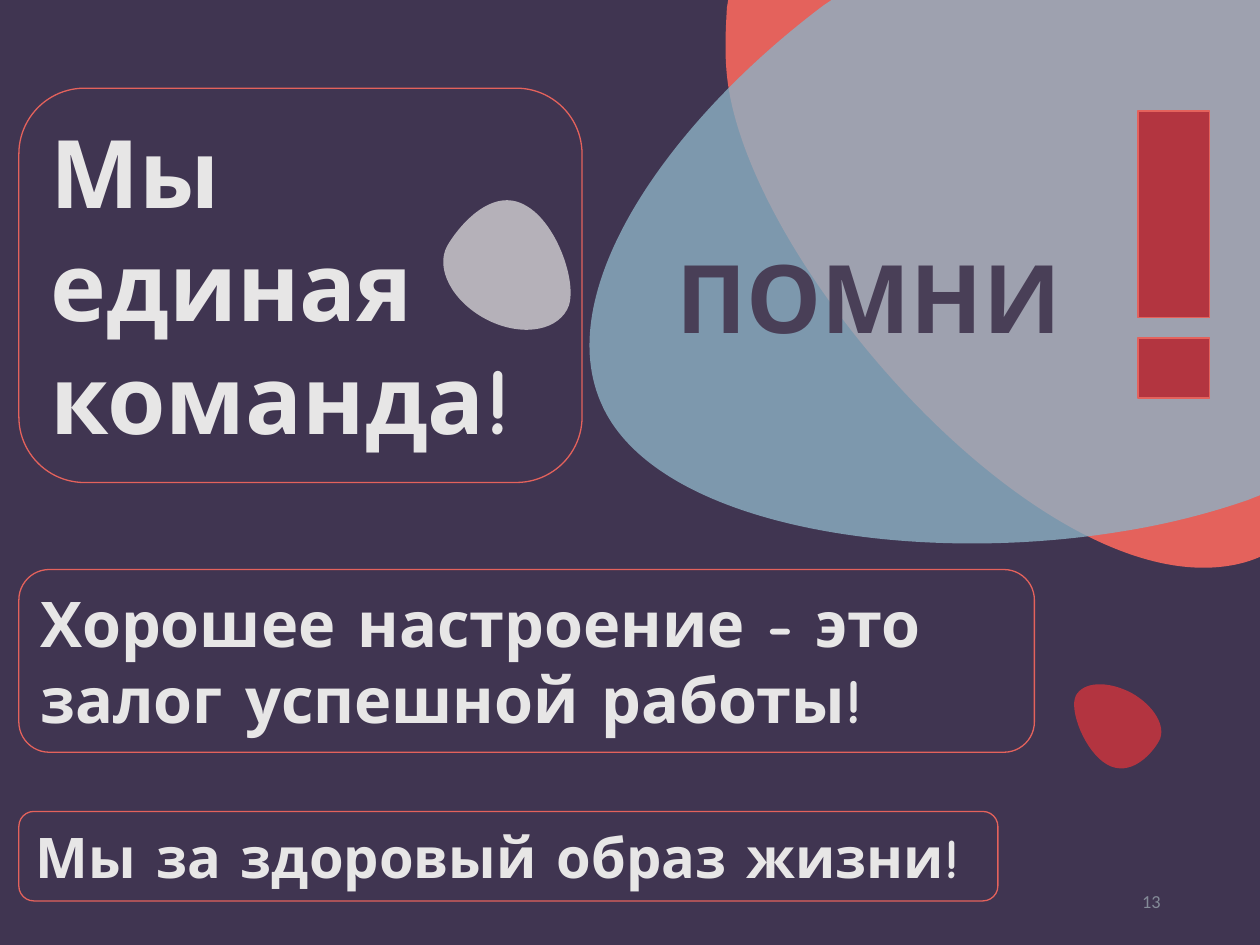
"""Build the team-spirit slide: blobs, three framed slogans and an exclamation mark."""
from pptx import Presentation
from pptx import util as u
from pptx.dml.color import RGBColor
from pptx.enum import shapes, text
from pptx.oxml.ns import qn
from lxml import etree

COLS, ROWS = 1000, 750
THEME = {
    "night": "403551", "coral": "E4625C", "sky": "8DB1C4", "light": "E7E6E6",
    "red": "D0343C", "mark": "B33540", "plum": "493F57", "grey": "848B98",
    "heading": "Comic Neue", "body": "Calibri",
    "large": 54, "medium": 36, "small": 32, "number": 10.5, "edge": 1,
}
BLOBS = [
    ("coral", 100, (576, 0, 424, 451), [
        (578, 0), (1000, 0), (1000, 442), (995, 444), (987, 447, 978, 449, 968, 450),
        (817, 465, 592, 206, 577, 60), (575, 41, 576, 23, 577, 6)]),
    ("sky", 80, (468, 0, 532, 432), [
        (660, 0), (1000, 0), (1000, 393), (990, 397), (955, 409, 921, 417, 889, 422),
        (723, 449, 522, 418, 478, 322), (436, 232, 530, 97, 654, 4)]),
    ("light", 70, (352, 159, 101, 103), [
        (450, 246), (460, 229, 443, 177, 417, 163), (391, 148, 365, 178, 355, 195),
        (345, 213, 359, 239, 385, 253), (411, 267, 440, 264, 450, 246)]),
    ("red", 80, (852, 543, 70, 66), [
        (854, 552), (848, 563, 861, 597, 879, 607), (897, 617, 914, 599, 920, 588),
        (926, 577, 916, 560, 898, 550), (879, 540, 860, 541, 854, 552)]),
]
SLOGANS = [
    ("Мы единая команда!", "large", (15, 70, 447, 313)),
    ("Хорошее настроение - это залог успешной работы!", "medium", (15, 452, 806, 145)),
    ("Мы за здоровый образ жизни!", "small", (15, 644, 777, 71)),
]
MARK = [(903, 88, 57, 164), (903, 268, 57, 48)]
REMINDER = ("ПОМНИ", (527, 185, 359, 101))
NUMBER = ("13", (706, 695, 225, 40))
GROW = {"auto_size": text.MSO_AUTO_SIZE.SHAPE_TO_FIT_TEXT,
        "vertical_anchor": text.MSO_ANCHOR.TOP}


def assign(obj, values):
    """Set every attribute named in a dict."""
    for name, value in values.items():
        setattr(obj, name, value)


def color(name):
    """Return a theme colour."""
    return RGBColor.from_string(THEME[name])


def place(prs, box):
    """Turn grid units into slide lengths, x and y alternating."""
    cell = prs.slide_width / COLS, prs.slide_height / ROWS
    return [round(v * cell[i % 2]) for i, v in enumerate(box)]


def paint(sp, fill=None, line=None, width=None, alpha=100):
    """Set fill, opacity and outline, without a shadow."""
    sp.shadow.inherit = False
    if fill:
        sp.fill.solid()
        sp.fill.fore_color.rgb = color(fill)
        if alpha < 100:
            clr = sp.fill._xPr.find(qn("a:solidFill"))[0]
            etree.SubElement(clr, qn("a:alpha"), val=str(alpha * 1000))
    else:
        sp.fill.background()
    if line:
        sp.line.color.rgb = color(line)
        if width:
            sp.line.width = u.Pt(width)
    else:
        sp.line.fill.background()


def write(sp, words, font, size, ink, frame, bold=False, align=text.PP_ALIGN.LEFT):
    """Fill a shape with one styled paragraph."""
    tf = sp.text_frame
    assign(tf, {"word_wrap": True} | frame)
    p = tf.paragraphs[0]
    p.alignment = align
    r = p.add_run()
    r.text = words
    assign(r.font, {"name": THEME[font], "size": u.Pt(THEME[size]), "bold": bold})
    r.font.color.rgb = color(ink)


def add_blob(prs, s, box, steps):
    """Add a freeform whose six-number steps are cubic curves."""
    left, top, width, height = place(prs, box)
    pen = s.shapes.build_freeform(left, top)
    pen.add_line_segments([(left + width, top), (left + width, top + height)])
    sp = pen.convert_to_shape()
    assign(sp, {"left": left, "top": top, "width": width, "height": height})
    path = next(sp._element.iter(qn("a:path")))
    for old in list(path):
        path.remove(old)
    for i, step in enumerate(steps):
        tag = "a:moveTo" if i == 0 else "a:lnTo" if len(step) == 2 else "a:cubicBezTo"
        node = etree.SubElement(path, qn(tag))
        spots = place(prs, step)
        for x, y in zip(spots[::2], spots[1::2]):
            etree.SubElement(node, qn("a:pt"), x=str(x - left), y=str(y - top))
    etree.SubElement(path, qn("a:close"))
    return sp


def main():
    """Assemble and save the slide."""
    prs = Presentation()
    assign(prs, {"slide_width": u.Inches(10), "slide_height": u.Inches(7.5)})
    s = prs.slides.add_slide(prs.slide_layouts[6])
    s.background.fill.solid()
    s.background.fill.fore_color.rgb = color("night")

    for fill, alpha, box, steps in BLOBS:
        paint(add_blob(prs, s, box, steps), fill, alpha=alpha)

    words, box = NUMBER
    write(s.shapes.add_textbox(*place(prs, box)), words, "body", "number", "grey",
          {"vertical_anchor": text.MSO_ANCHOR.MIDDLE}, align=text.PP_ALIGN.RIGHT)

    for words, size, box in SLOGANS:
        sp = s.shapes.add_shape(shapes.MSO_SHAPE.ROUNDED_RECTANGLE, *place(prs, box))
        paint(sp, line="coral")
        write(sp, words, "heading", size, "light", GROW, bold=True)

    mark = s.shapes.add_group_shape()
    for box in MARK:
        sp = mark.shapes.add_shape(shapes.MSO_SHAPE.RECTANGLE, *place(prs, box))
        paint(sp, "mark", "coral", THEME["edge"])

    words, box = REMINDER
    write(s.shapes.add_textbox(*place(prs, box)), words, "heading", "large", "plum",
          GROW | {"word_wrap": False}, bold=True)
    prs.save("out.pptx")


if __name__ == "__main__":
    main()
